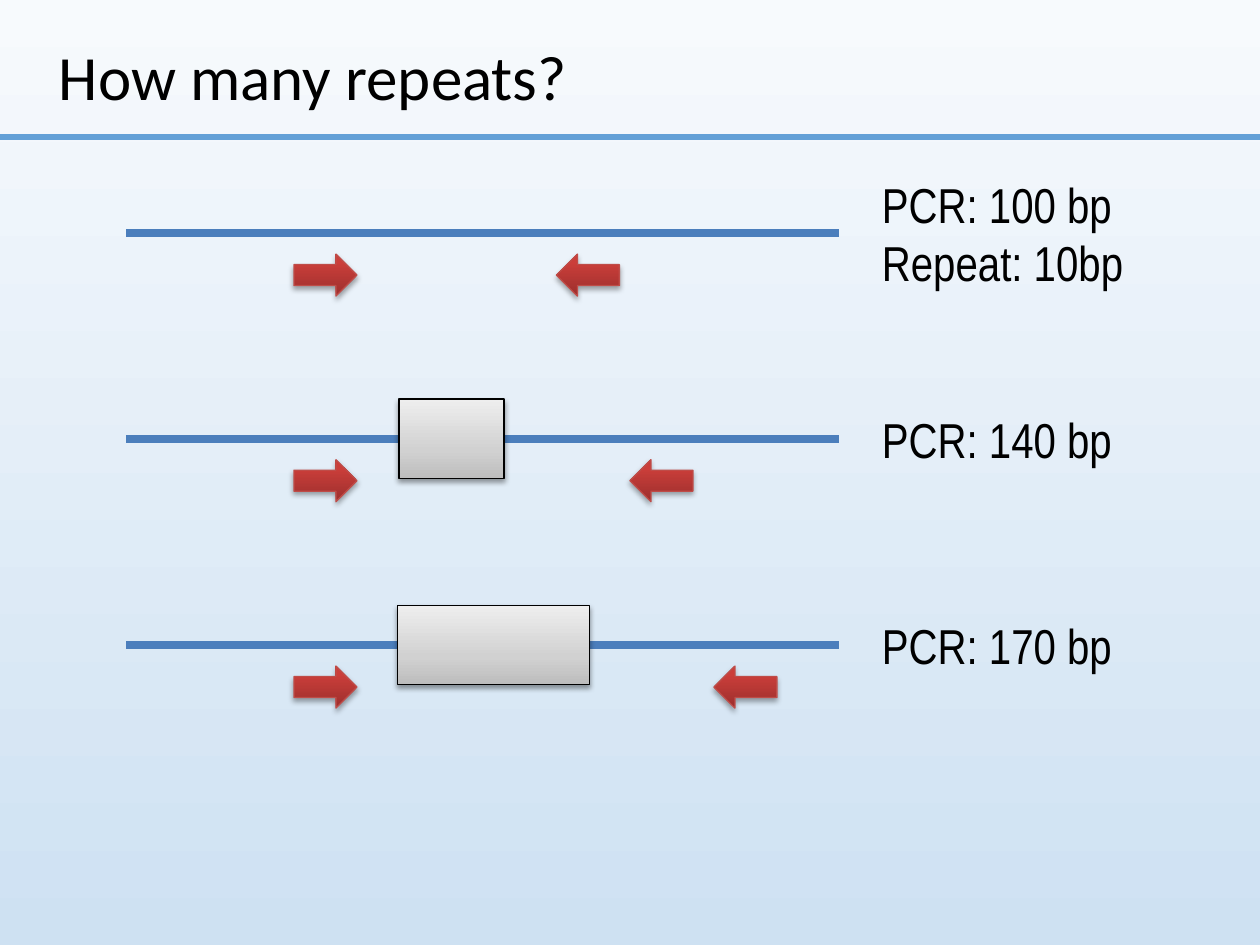
from copy import deepcopy

from lxml import etree
from pptx import Presentation
from pptx.dml.color import RGBColor
from pptx.enum import shapes, text
from pptx.oxml import ns
from pptx.util import Pt

BLACK = RGBColor(0x00, 0x00, 0x00)
RULE_BLUE = RGBColor(0x63, 0xA0, 0xD7)
STRAND_BLUE = RGBColor(0x4B, 0x7E, 0xBC)
PRIMER_EDGE = RGBColor(0xBF, 0x4C, 0x48)
SKY = [(0, RGBColor(0xF7, 0xFA, 0xFD)), (1, RGBColor(0xCE, 0xE1, 0xF2))]
PRIMER_RED = [(0, RGBColor(0x9C, 0x2F, 0x2D)), (0.8, RGBColor(0xCB, 0x3E, 0x3A)),
              (1, RGBColor(0xCE, 0x3B, 0x37))]
REPEAT_GREY = [(0, RGBColor(0xBD, 0xBD, 0xBD)), (0.35, RGBColor(0xD1, 0xD1, 0xD1)),
               (1, RGBColor(0xEE, 0xEE, 0xEE))]

TITLE_FONT = {"name": "Calibri", "size": Pt(36)}
LABEL_FONT = {"name": "Arial Narrow", "size": Pt(28)}
TITLE_FRAME = {"word_wrap": True, "vertical_anchor": text.MSO_ANCHOR.MIDDLE}
LABEL_FRAME = {"word_wrap": True, "margin_left": 0, "margin_right": 0,
               "auto_size": text.MSO_AUTO_SIZE.SHAPE_TO_FIT_TEXT}

LABEL_HEIGHT, LABEL_PITCH = 41, 33
PRIMER_WIDTH, PRIMER_HEIGHT, PRIMER_DROP = 36, 24, 12
FORWARD_PRIMER = 96
REPEAT_HEIGHT = 45.4

# Strand height, reverse primer, repeat block (left, width), labels
ROWS = [
    (133.2, 246, None, ["PCR: 100 bp", "Repeat: 10bp"]),
    (250.7, 288, (156, 60), ["PCR: 140 bp"]),
    (368.6, 336, (155, 110), ["PCR: 170 bp"]),
]


def apply(target, values):
    for name, value in values.items():
        setattr(target, name, value)


def fill_gradient(fill, element, stops, angle):
    """Angle runs counter-clockwise, as python-pptx counts it."""
    fill.gradient()
    fill.gradient_angle = angle
    stop_list = element.find(".//" + ns.qn("a:gsLst"))
    for _ in stops[2:]:
        stop_list.append(deepcopy(stop_list[-1]))
    for stop, (position, colour) in zip(fill.gradient_stops, stops):
        stop.position = position
        stop.color.rgb = colour


def add_text(slide, box, words, frame_format, font_format):
    frame = slide.shapes.add_textbox(*map(Pt, box)).text_frame
    apply(frame, frame_format)
    paragraph = frame.paragraphs[0]
    run = paragraph.add_run()
    run.text = words
    apply(run.font, font_format)
    run.font.color.rgb = BLACK
    return paragraph


def add_line(slide, left, right, y, colour, width):
    line = slide.shapes.add_connector(
        shapes.MSO_CONNECTOR.STRAIGHT, Pt(left), Pt(y), Pt(right), Pt(y))
    line.line.color.rgb = colour
    line.line.width = Pt(width)
    etree.SubElement(line.element.spPr, ns.qn("a:effectLst"))


def add_shaded(slide, kind, box, stops, edge, shadow_alpha):
    shape = slide.shapes.add_shape(kind, *map(Pt, box))
    fill_gradient(shape.fill, shape.element.spPr, stops, 90)
    shape.line.color.rgb = edge
    shape.line.width = Pt(0.75)
    # Soft shadow straight below
    shape.shadow.inherit = False
    effects = shape.element.spPr.find(ns.qn("a:effectLst"))
    shadow = etree.SubElement(
        effects, ns.qn("a:outerShdw"), blurRad=str(Pt(3.1)), dist=str(Pt(1.8)),
        dir="5400000", rotWithShape="0")
    colour = etree.SubElement(shadow, ns.qn("a:srgbClr"), val=str(BLACK))
    etree.SubElement(colour, ns.qn("a:alpha"), val=str(shadow_alpha * 1000))
    return shape


def add_header(slide, left, top, width, height):
    title = add_text(slide, (left + 26.6, top + 18, width - 53.2, height - 23),
                     "How many repeats?", TITLE_FRAME, TITLE_FONT)
    title.line_spacing = 0.9
    add_line(slide, left, left + width, top + height, RULE_BLUE, 3.5)


def add_strand(slide, left, y, width, reverse_primer, repeat):
    add_line(slide, left, left + width, y, STRAND_BLUE, 4.5)
    # Primers facing each other
    for offset, flipped in ((FORWARD_PRIMER, False), (reverse_primer, True)):
        primer = add_shaded(
            slide, shapes.MSO_SHAPE.RIGHT_ARROW,
            (left + offset, y + PRIMER_DROP, PRIMER_WIDTH, PRIMER_HEIGHT),
            PRIMER_RED, PRIMER_EDGE, 35)
        if flipped:
            primer.element.spPr.xfrm.set("flipH", "1")
    # Repeat block
    if repeat:
        offset, block_width = repeat
        add_shaded(slide, shapes.MSO_SHAPE.RECTANGLE,
                   (left + offset, y - REPEAT_HEIGHT / 2, block_width, REPEAT_HEIGHT),
                   REPEAT_GREY, BLACK, 38)


def add_labels(slide, left, y, width, labels):
    """Stack the labels, centred on the strand."""
    top = y - (LABEL_HEIGHT + LABEL_PITCH * (len(labels) - 1)) / 2
    for index, label in enumerate(labels):
        add_text(slide, (left, top + index * LABEL_PITCH, width, LABEL_HEIGHT),
                 label, LABEL_FRAME, LABEL_FONT)


def main():
    deck = Presentation()
    deck.slide_width, deck.slide_height = Pt(720), Pt(540)
    slide = deck.slides.add_slide(deck.slide_layouts[6])
    fill_gradient(slide.background.fill, slide.element, SKY, 270)
    add_header(slide, 0, 0, 720, 78.5)
    for y, reverse_primer, repeat, labels in ROWS:
        add_strand(slide, 72, y, 407.5, reverse_primer, repeat)
        add_labels(slide, 504, y, 144, labels)
    deck.save("out.pptx")


if __name__ == "__main__":
    main()
